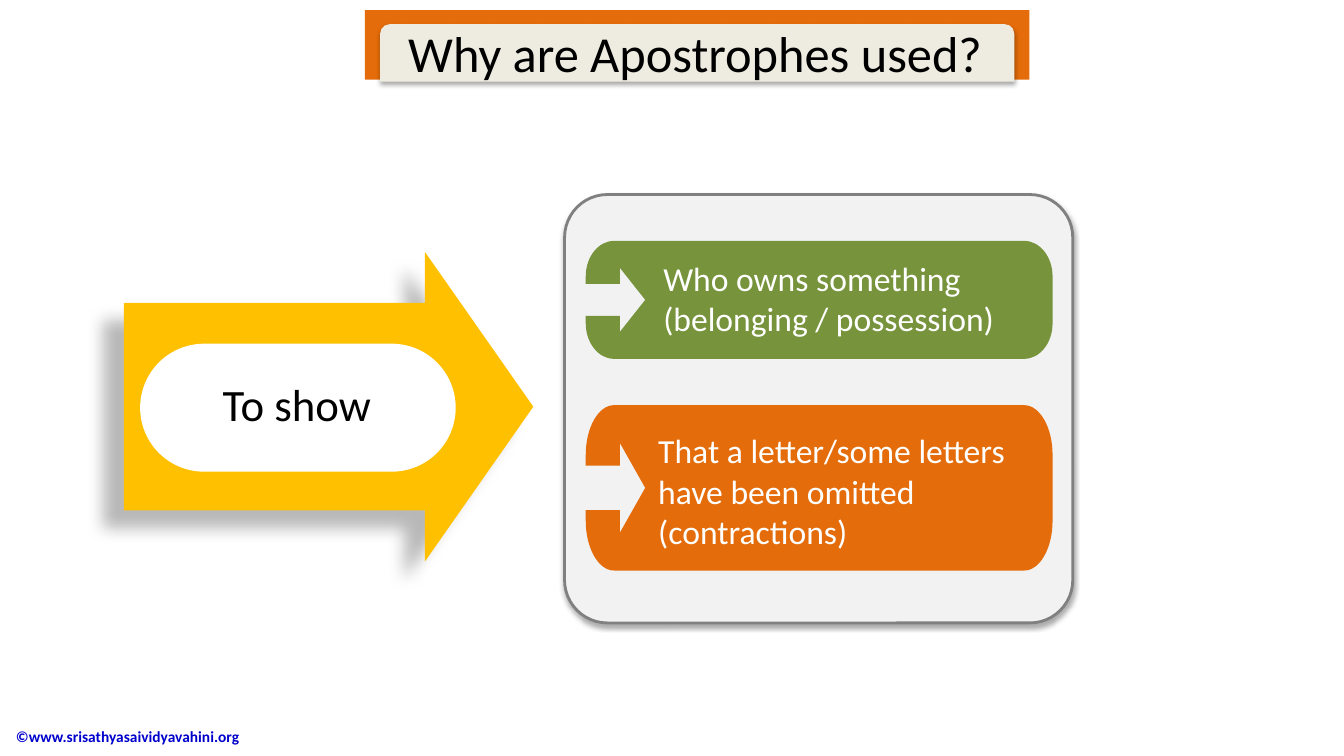
from lxml import etree
from pptx import Presentation
from pptx.dml.color import RGBColor
from pptx.enum.shapes import MSO_SHAPE
from pptx.enum.text import MSO_ANCHOR, MSO_AUTO_SIZE, PP_ALIGN
from pptx.oxml.ns import qn
from pptx.util import Inches, Pt

RECT = MSO_SHAPE.RECTANGLE
ROUND_TOP = MSO_SHAPE.ROUND_2_SAME_RECTANGLE
ROUND_RECT = MSO_SHAPE.ROUNDED_RECTANGLE
RIGHT_ARROW = MSO_SHAPE.RIGHT_ARROW
LEFT, CENTER = PP_ALIGN.LEFT, PP_ALIGN.CENTER
TOP, MIDDLE = MSO_ANCHOR.TOP, MSO_ANCHOR.MIDDLE
FIXED, GROW = MSO_AUTO_SIZE.NONE, MSO_AUTO_SIZE.SHAPE_TO_FIT_TEXT

BLACK = RGBColor(0x00, 0x00, 0x00)
WHITE = RGBColor(0xFF, 0xFF, 0xFF)
ORANGE = RGBColor(0xE4, 0x6C, 0x0A)
GREEN = RGBColor(0x77, 0x93, 0x3C)
YELLOW = RGBColor(0xFF, 0xC0, 0x00)
CREAM = RGBColor(0xEE, 0xEC, 0xE1)
PALE_GREY = RGBColor(0xF2, 0xF2, 0xF2)
GREY = RGBColor(0x80, 0x80, 0x80)
BLUE = RGBColor(0x00, 0x00, 0xCC)

FONT = "Calibri"

# Content; boxes are left, top, width, height in inches
TITLE = ("Why are Apostrophes used?", (3.95, 0.17, 6.11, 0.71))
PURPOSE = ("To show", (1.48, 3.69, 2.93, 0.71))
COPYRIGHT = ("©www.srisathyasaividyavahini.org", (0.06, 7.1, 3.53, 0.41))
# text, text box, card top, card height, card colour
REASONS = [
    ("Who owns something (belonging / possession)",
     (6.48, 2.51, 3.95, 0.91), 2.39, 1.17, GREEN),
    ("That a letter/some letters have been omitted (contractions)",
     (6.43, 4.22, 3.96, 1.31), 4.02, 1.64, ORANGE),
]
CARD_LEFT, CARD_WIDTH = 5.81, 4.63

# Shadows: opacity %, blur pt, distance pt, direction in degrees
SOFT_SHADOW = (32, 3.5, 2.2, 90)
ARROW_SHADOW = (28, 11.8, 19.7, 141)

prs = Presentation()
prs.slide_width, prs.slide_height = Inches(13.33), Inches(7.5)
slide = prs.slides.add_slide(prs.slide_layouts[6])


def add_group():
    return slide.shapes.add_group_shape().shapes


def paint(shape, fill, shadow=None):
    shape.fill.solid()
    shape.fill.fore_color.rgb = fill
    shape.line.fill.background()
    shape.shadow.inherit = False
    if shadow:
        opacity, blur, distance, angle = shadow
        effects = shape._element.spPr.find(qn("a:effectLst"))
        outer = etree.SubElement(
            effects, qn("a:outerShdw"), blurRad=str(Pt(blur)),
            dist=str(Pt(distance)), dir=str(angle * 60000), rotWithShape="0")
        color = etree.SubElement(outer, qn("a:srgbClr"), val=str(BLACK))
        etree.SubElement(color, qn("a:alpha"), val=str(opacity * 1000))


def add_block(parent, kind, box, fill, adjustments=(), shadow=None):
    block = parent.add_shape(kind, *map(Inches, box))
    for index, value in enumerate(adjustments):
        block.adjustments[index] = value
    paint(block, fill, shadow)
    return block


def add_label(parent, content, size, color, align=LEFT, anchor=TOP, fit=GROW, bold=False):
    text, box = content
    frame = parent.add_textbox(*map(Inches, box)).text_frame
    frame.word_wrap = True
    frame.auto_size = fit
    frame.vertical_anchor = anchor
    paragraph = frame.paragraphs[0]
    paragraph.alignment = align
    run = paragraph.add_run()
    run.text = text
    run.font.name, run.font.size, run.font.bold = FONT, Pt(size), bold
    run.font.color.rgb = color


def round_corner(start, corner, end):
    """Bezier points of an elliptical quarter turn."""
    pull = 0.55
    handles = [tuple(p + pull * (c - p) for p, c in zip(point, corner))
               for point in (start, end)]
    return [start, *handles, end]


def add_notched_card(parent, top, height, fill):
    """Rounded card with an arrow-shaped notch in its left edge."""
    left, right, bottom = CARD_LEFT, CARD_LEFT + CARD_WIDTH, top + height
    middle = top + height / 2
    rx, ry = 0.28, 0.3 * height
    shaft, head = 0.135 * height, 0.27 * height
    neck, tip = left + 0.34, left + 0.59

    notch = [(left, middle + shaft), (neck, middle + shaft),
             (neck, middle + head), (tip, middle), (neck, middle - head),
             (neck, middle - shaft), (left, middle - shaft)]
    pieces = [
        round_corner((right - rx, top), (right, top), (right, top + ry)),
        round_corner((right, bottom - ry), (right, bottom), (right - rx, bottom)),
        round_corner((left + rx, bottom), (left, bottom), (left, bottom - ry)),
        notch,
        round_corner((left, top + ry), (left, top), (left + rx, top)),
    ]
    builder = parent.build_freeform(Inches(left + rx), Inches(top))
    builder.add_line_segments(
        [(Inches(x), Inches(y)) for piece in pieces for x, y in piece], close=True)
    card = builder.convert_to_shape()

    # Turn the last three points of each corner into one curve
    contour = next(card._element.spPr.iter(qn("a:path")))
    segments = contour.findall(qn("a:lnTo"))
    first = 0
    for piece in pieces:
        if piece is not notch:
            curve = etree.SubElement(contour, qn("a:cubicBezTo"))
            segments[first + 1].addprevious(curve)
            for segment in segments[first + 1:first + 4]:
                curve.append(segment[0])
                contour.remove(segment)
        first += len(piece)
    paint(card, fill)


# Copyright line
add_label(slide.shapes, COPYRIGHT, 11, BLUE, anchor=MIDDLE, fit=FIXED, bold=True)

# Title banner
banner = add_group()
add_block(banner, RECT, (3.62, 0.1, 6.59, 0.69), ORANGE)
add_block(banner, ROUND_TOP, (3.77, 0.24, 6.29, 0.57), CREAM, shadow=SOFT_SHADOW)
add_label(slide.shapes, TITLE, 36, BLACK)

# Panel behind the reasons
panel = add_block(slide.shapes, ROUND_RECT, (5.6, 1.93, 5.04, 4.25), PALE_GREY,
                  [0.1], SOFT_SHADOW)
panel.line.color.rgb = GREY
panel.line.width = Pt(2)

# Arrow leading to the reasons
pointer = add_group()
add_block(pointer, RIGHT_ARROW, (1.23, 2.5, 4.06, 3.07), YELLOW, [0.67, 0.35], ARROW_SHADOW)
add_block(pointer, ROUND_RECT, (1.39, 3.41, 3.13, 1.27), WHITE, [0.5])
add_label(pointer, PURPOSE, 32, BLACK, align=CENTER)

# Reason cards
for reason, text_box, card_top, card_height, card_color in REASONS:
    reason_group = add_group()
    add_notched_card(reason_group, card_top, card_height, card_color)
    add_label(reason_group, (reason, text_box), 24, WHITE)

prs.save("out.pptx")
